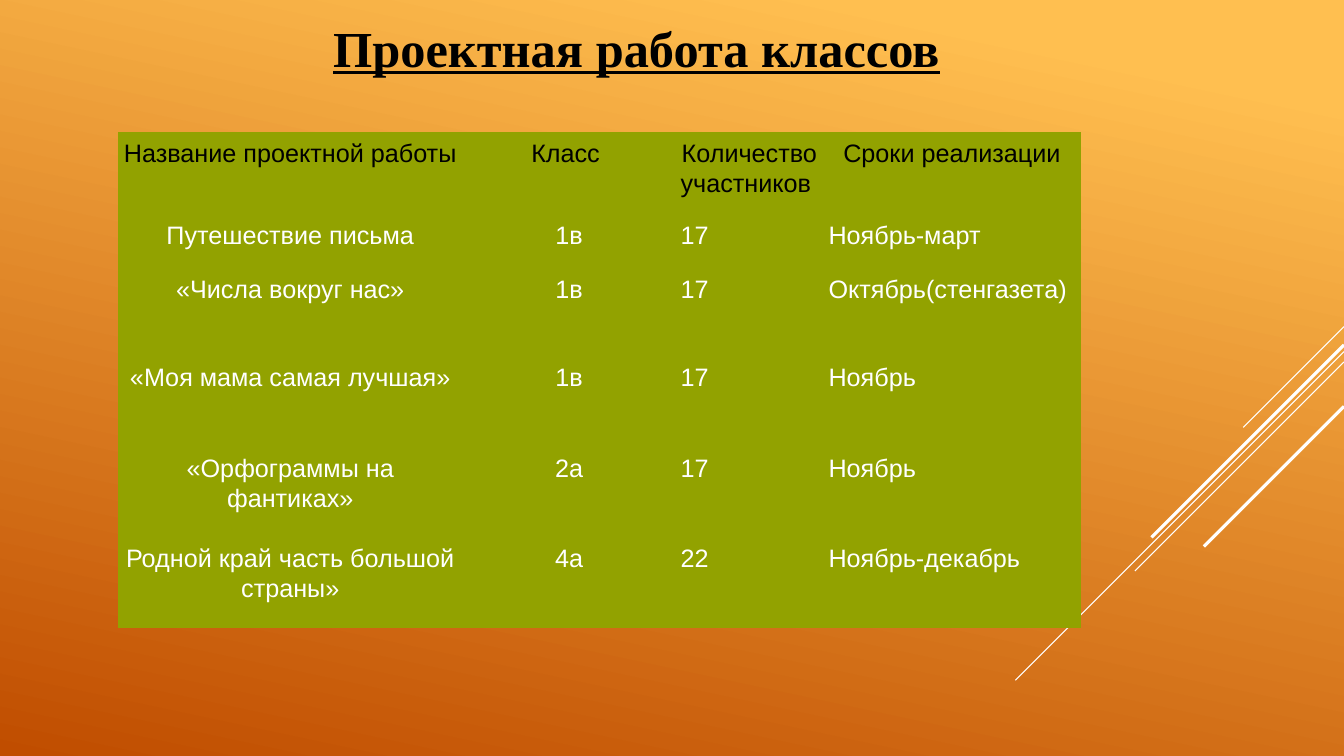
import pptx
import pptx.util
import pptx.dml.color
import pptx.enum.shapes
import pptx.enum.text
import pptx.oxml.ns
import lxml.etree

Cm = pptx.util.Cm
Pt = pptx.util.Pt
RGBColor = pptx.dml.color.RGBColor
align = pptx.enum.text.PP_ALIGN
qn = pptx.oxml.ns.qn

GOLD = RGBColor(0xFF, 0xBF, 0x50)
RUST = RGBColor(0xC0, 0x4D, 0x00)
OLIVE = RGBColor(0x92, 0xA2, 0x00)
WHITE = RGBColor(0xFF, 0xFF, 0xFF)
BLACK = RGBColor(0x00, 0x00, 0x00)
PLAIN = "{2D5ABB26-0587-4C30-8999-92F81FD0307C}"

deck = pptx.Presentation()
deck.slide_width = Cm(33.87)
deck.slide_height = Cm(19.05)
slide = deck.slides.add_slide(deck.slide_layouts[5])

back = slide.background.fill
back.gradient()
back.gradient_angle = 258
for stop, place, color in zip(back.gradient_stops, (0.1, 1), (GOLD, RUST)):
    stop.position = place
    stop.color.rgb = color

title = slide.shapes.title
title.left, title.top = Cm(4.19), Cm(0)
title.width, title.height = Cm(23.7), Cm(4.19)
frame = title.text_frame
frame.text = "Проектная работа классов"
frame.vertical_anchor = pptx.enum.text.MSO_ANCHOR.MIDDLE
frame.margin_top = Cm(0)
frame.margin_bottom = Cm(1.82)
head = frame.paragraphs[0]
head.alignment = align.CENTER
font = head.runs[0].font
font.name = "Times New Roman"
font.size = Pt(36)
font.bold = True
font.underline = True
font.color.rgb = BLACK

edge = 33.87
rays = [
    (8.23, 2.54, 0.75),
    (8.86, 8.28, 0.75),
    (9.12, 5.27, 0.75),
    (8.69, 4.85, 2.25),
    (10.24, 3.53, 2.25),
]
for top, run, weight in rays:
    ray = slide.shapes.add_connector(
        pptx.enum.shapes.MSO_CONNECTOR.STRAIGHT,
        Cm(edge), Cm(top), Cm(edge - run), Cm(top + run))
    ray.line.color.rgb = WHITE
    ray.line.width = Pt(weight)
    props = ray.element.find(qn("p:spPr"))
    lxml.etree.SubElement(props, qn("a:effectLst"))

rows = [
    ("Название проектной работы", "Класс ", "Количество участников ", "Сроки реализации"),
    ("Путешествие письма", "1в", "17", "Ноябрь-март"),
    ("«Числа вокруг нас»", "1в", "17", "Октябрь(стенгазета)"),
    ("«Моя мама самая лучшая»", "1в", "17", "Ноябрь"),
    ("«Орфограммы на фантиках»", "2а", "17", "Ноябрь"),
    ("Родной край часть большой страны»", "4а", "22", "Ноябрь-декабрь"),
]
widths = [8.69, 5.36, 3.73, 6.48]
heights = [2.07, 1.36, 2.23, 2.28, 2.28, 2.28]

holder = slide.shapes.add_table(
    len(rows), len(widths), Cm(2.97), Cm(3.33), Cm(sum(widths)), Cm(sum(heights)))
for style in holder.element.iter(qn("a:tableStyleId")):
    style.text = PLAIN
table = holder.table
for col, width in zip(table.columns, widths):
    col.width = Cm(width)
for row, height in zip(table.rows, heights):
    row.height = Cm(height)

for r, words in enumerate(rows):
    for c, word in enumerate(words):
        cell = table.cell(r, c)
        cell.fill.solid()
        cell.fill.fore_color.rgb = OLIVE
        cell.margin_left = cell.margin_right = Cm(0.13)
        cell.margin_top = cell.margin_bottom = Cm(0.13)
        cell.text_frame.text = word
        para = cell.text_frame.paragraphs[0]
        para.alignment = align.CENTER if r == 0 or c < 2 else align.LEFT
        para.line_spacing = 1.07
        font = para.runs[0].font
        font.name = "Arial"
        font.size = Pt(18)
        font.color.rgb = BLACK if r == 0 else WHITE

deck.save("out.pptx")
